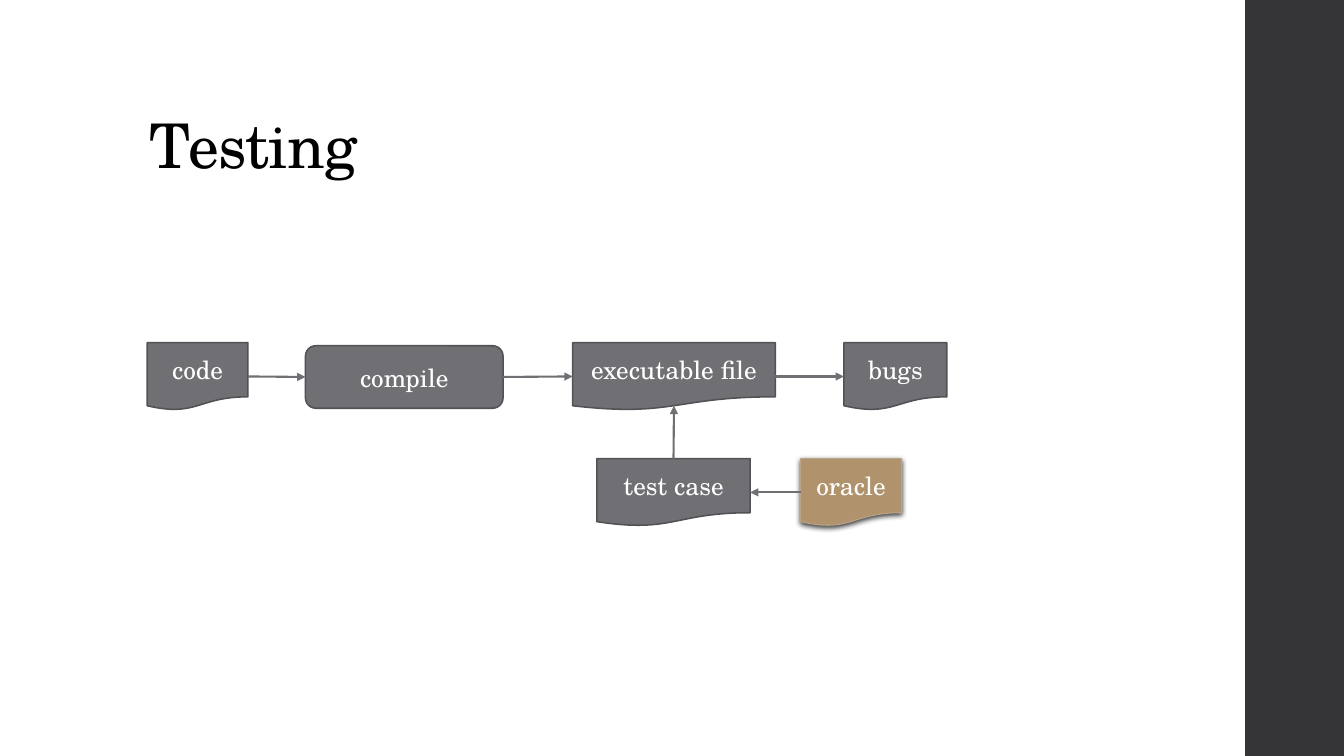
from dataclasses import dataclass

from lxml import etree
from pptx import Presentation
from pptx.dml.color import RGBColor
from pptx.enum.shapes import MSO_CONNECTOR, MSO_SHAPE
from pptx.enum.text import MSO_ANCHOR, MSO_AUTO_SIZE, PP_ALIGN
from pptx.oxml.ns import qn
from pptx.shapes.autoshape import Shape
from pptx.shapes.connector import Connector
from pptx.slide import Slide
from pptx.text.text import TextFrame
from pptx.util import Emu, Pt

DOCUMENT = MSO_SHAPE.FLOWCHART_DOCUMENT
ROUNDED = MSO_SHAPE.ROUNDED_RECTANGLE
RECTANGLE = MSO_SHAPE.RECTANGLE
STRAIGHT = MSO_CONNECTOR.STRAIGHT
LEFT, CENTER = PP_ALIGN.LEFT, PP_ALIGN.CENTER
BOTTOM_ANCHOR, MIDDLE_ANCHOR = MSO_ANCHOR.BOTTOM, MSO_ANCHOR.MIDDLE
NO_AUTOFIT = MSO_AUTO_SIZE.NONE

EMU_PER_PX = 9144  # 100 px to the inch
FONT = "TeX Gyre Schola"
GRAY, DARK_GRAY, WHITE = "6F6F74", "525256", "FFFFFF"
TAN, LIGHT_TAN = "B0926C", "B9A489"
TOP_SITE, LEFT_SITE, BOTTOM_SITE, RIGHT_SITE = range(4)
DOCUMENT_BOTTOM = 0.934  # height share of a document's bottom connection site


@dataclass(frozen=True)
class Node:
    label: str
    left: int
    top: int
    width: int
    height: int = 67
    kind: MSO_SHAPE = DOCUMENT
    fill: str = GRAY
    outline: str = DARK_GRAY
    outline_width: float = 1.1
    shadow: bool = False


@dataclass(frozen=True)
class Arrow:
    start: str
    end: str
    start_site: int = RIGHT_SITE
    end_site: int = LEFT_SITE


NODES = [
    Node("code", 146, 340, 100),
    Node("compile", 303, 343, 196, 62, kind=ROUNDED),
    Node("executable file", 568, 340, 201),
    Node("bugs", 837, 340, 102),
    Node("test case", 592, 455, 152),
    Node("oracle", 794, 455, 100, fill=TAN, outline=LIGHT_TAN,
         outline_width=0.75, shadow=True),
]
ARROWS = [
    Arrow("code", "compile"),
    Arrow("compile", "executable file"),
    Arrow("executable file", "bugs"),
    Arrow("test case", "executable file", TOP_SITE, BOTTOM_SITE),
    Arrow("oracle", "test case", LEFT_SITE, RIGHT_SITE),
]


def px(length: int) -> Emu:
    return Emu(length * EMU_PER_PX)


def color(value: str) -> RGBColor:
    return RGBColor.from_string(value)


def write_text(frame: TextFrame, text: str, *, size: int, ink: str, align: PP_ALIGN,
               anchor: MSO_ANCHOR, line_spacing: float = 1.0, tracking: int = 0) -> None:
    """Fill the frame with one formatted line; tracking is in hundredths of a point."""
    frame.word_wrap = True
    frame.auto_size = NO_AUTOFIT
    frame.vertical_anchor = anchor
    paragraph = frame.paragraphs[0]
    paragraph.alignment = align
    paragraph.line_spacing = line_spacing
    run = paragraph.add_run()
    run.text = text
    run.font.name = FONT
    run.font.size = Pt(size)
    run.font.color.rgb = color(ink)
    if tracking:
        run.font._element.set("spc", str(tracking))


def add_drop_shadow(shape: Shape) -> None:
    effects = shape._element.spPr.find(qn("a:effectLst"))
    shadow = etree.SubElement(effects, qn("a:outerShdw"), blurRad=str(Pt(4)),
                              dist=str(Pt(1.2)), dir="5400000", rotWithShape="0")
    black = etree.SubElement(shadow, qn("a:srgbClr"), val="000000")
    etree.SubElement(black, qn("a:alpha"), val="75000")


def add_sidebar(slide: Slide) -> None:
    sidebar = slide.shapes.add_shape(RECTANGLE, px(1235), px(0), px(98), px(750))
    sidebar.shadow.inherit = False
    sidebar.fill.solid()
    sidebar.fill.fore_color.rgb = color("353537")
    sidebar.line.fill.background()


def add_title(slide: Slide, text: str) -> None:
    title = slide.shapes.title
    title.left, title.top, title.width, title.height = px(138), px(40), px(1060), px(145)
    write_text(title.text_frame, text, size=44, ink="000000", align=LEFT,
               anchor=BOTTOM_ANCHOR, line_spacing=0.9, tracking=-50)


def add_node(slide: Slide, node: Node) -> Shape:
    shape = slide.shapes.add_shape(node.kind, px(node.left), px(node.top),
                                   px(node.width), px(node.height))
    shape.shadow.inherit = False
    shape.fill.solid()
    shape.fill.fore_color.rgb = color(node.fill)
    shape.line.color.rgb = color(node.outline)
    shape.line.width = Pt(node.outline_width)
    if node.shadow:
        add_drop_shadow(shape)
    write_text(shape.text_frame, node.label, size=18, ink=WHITE, align=CENTER,
               anchor=MIDDLE_ANCHOR)
    return shape


def add_arrow(slide: Slide, arrow: Arrow, shapes: dict[str, Shape]) -> Connector:
    target = shapes[arrow.end]
    connector = slide.shapes.add_connector(STRAIGHT, 0, 0, 0, 0)
    connector.begin_connect(shapes[arrow.start], arrow.start_site)
    connector.end_connect(target, arrow.end_site)
    if arrow.end_site == BOTTOM_SITE:
        connector.end_y = Emu(target.top + round(target.height * DOCUMENT_BOTTOM))
    connector.line.color.rgb = color(GRAY)
    connector.line.width = Pt(1.5)
    etree.SubElement(connector.line._get_or_add_ln(), qn("a:tailEnd"), type="triangle")
    etree.SubElement(connector._element.spPr, qn("a:effectLst"))
    return connector


def main() -> None:
    presentation = Presentation()
    presentation.slide_width, presentation.slide_height = px(1333), px(750)
    slide = presentation.slides.add_slide(presentation.slide_layouts[5])
    add_sidebar(slide)
    add_title(slide, "Testing")
    shapes = {node.label: add_node(slide, node) for node in NODES}
    for arrow in ARROWS:
        add_arrow(slide, arrow, shapes)
    presentation.save("out.pptx")


if __name__ == "__main__":
    main()
